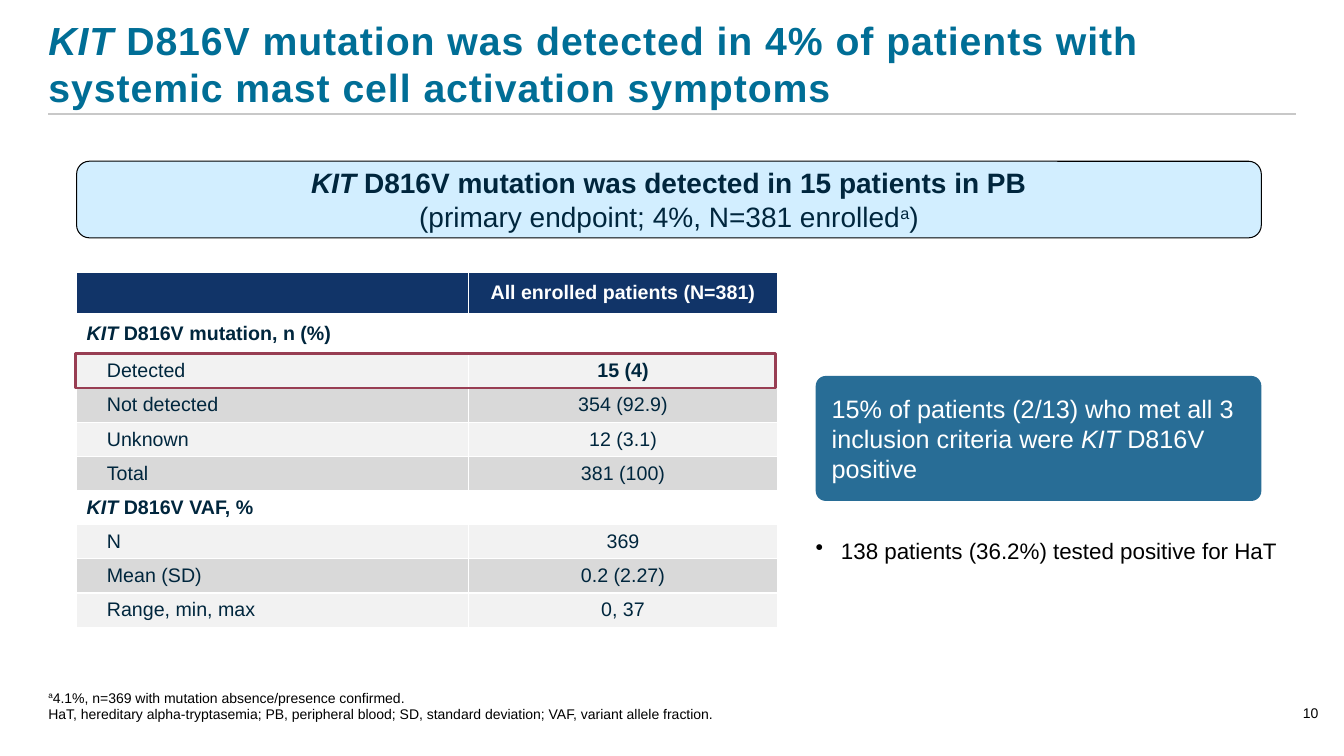
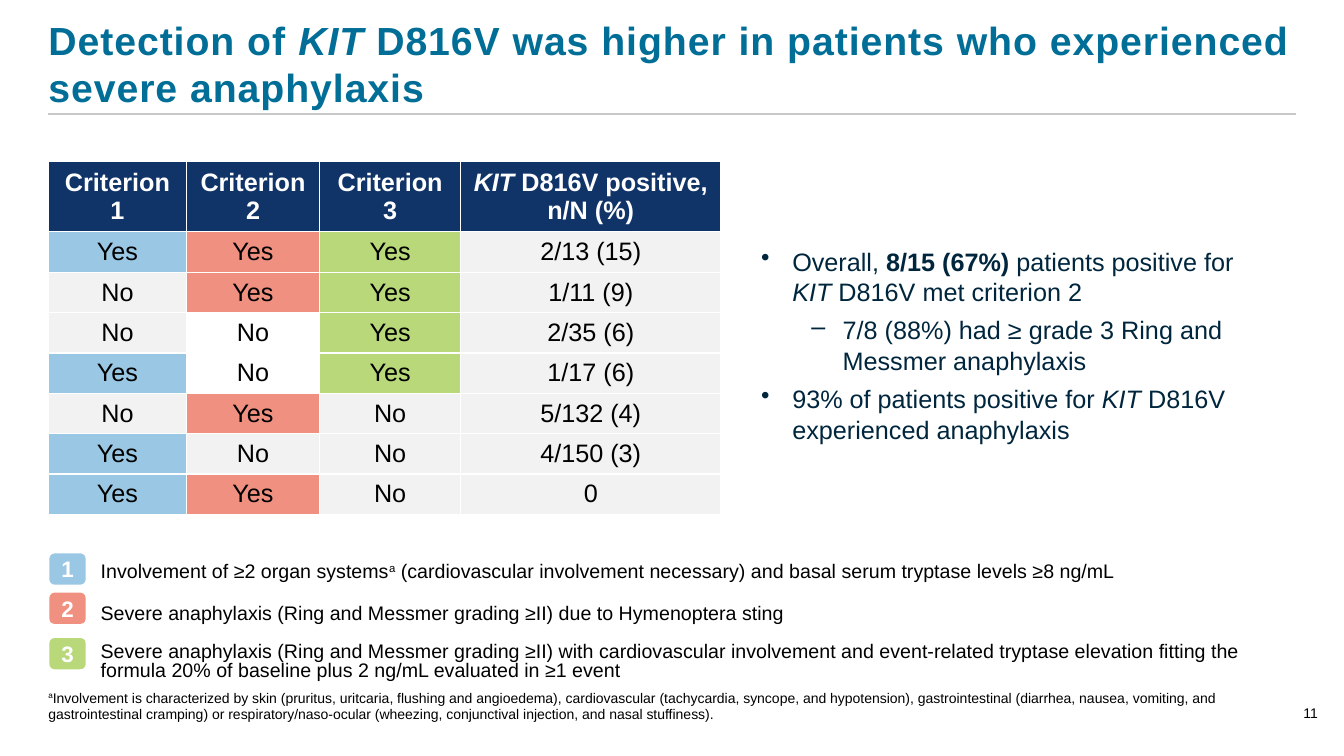
from dataclasses import dataclass

from lxml import etree
from pptx import Presentation
from pptx.dml.color import RGBColor
from pptx.enum.shapes import MSO_CONNECTOR, MSO_SHAPE
from pptx.enum.text import MSO_ANCHOR, MSO_AUTO_SIZE, PP_ALIGN
from pptx.oxml.ns import qn
from pptx.util import Inches, Pt

LEFT, CENTER = PP_ALIGN.LEFT, PP_ALIGN.CENTER
TOP, MIDDLE, BOTTOM = MSO_ANCHOR.TOP, MSO_ANCHOR.MIDDLE, MSO_ANCHOR.BOTTOM
FIXED = MSO_AUTO_SIZE.NONE
RECT, ROUND = MSO_SHAPE.RECTANGLE, MSO_SHAPE.ROUNDED_RECTANGLE
STRAIGHT = MSO_CONNECTOR.STRAIGHT
SIDES = ("a:lnL", "a:lnR", "a:lnT", "a:lnB")


@dataclass(frozen=True)
class Theme:
    """Colours, font and type sizes of the deck."""

    font: str = "Arial"
    title: str = "006E96"
    rule: str = "C8C8C8"
    ink: str = "00263D"
    black: str = "000000"
    white: str = "FFFFFF"
    navy: str = "113468"
    pale: str = "D2EEFF"
    teal: str = "286D96"
    mark: str = "983E53"
    light: str = "F2F2F2"
    dark: str = "D9D9D9"
    keys: tuple = ("9AC8E4", "F09080", "B8D879")
    head: int = 28
    lead: int = 20
    body: int = 18
    mid: int = 16
    small: int = 14
    note: int = 10


T = Theme()
KIT = ("KIT", "i")
SECTIONS = (1, 6)
BLANKS = ((3, 1), (4, 1))


def rgb(code):
    """Turn a hex code into a colour."""
    return RGBColor.from_string(code)


def apply(item, **values):
    """Set each named value on an object."""
    for name, value in values.items():
        setattr(item, name, value)


def box(values):
    """Turn numbers into inch lengths."""
    return [Inches(value) for value in values]


def pad(item, sides):
    """Set left, top, right and bottom margins."""
    names = ("margin_left", "margin_top", "margin_right", "margin_bottom")
    apply(item, **dict(zip(names, box(sides))))


def write(frame, paras, size, color, bold=False, **form):
    """Fill a text frame with paragraphs of plain or flagged runs."""
    for num, runs in enumerate(paras):
        para = frame.add_paragraph() if num else frame.paragraphs[0]
        apply(para, **form)
        for part in runs:
            text, flags = (part, "") if isinstance(part, str) else part
            run = para.add_run()
            run.text = text
            apply(run.font, name=T.font, size=Pt(size),
                  bold=bold or "b" in flags, italic="i" in flags)
            run.font.color.rgb = rgb(color)
            if "s" in flags:
                run.font._element.set("baseline", "30000")


def bullet(para, sign, left, hang):
    """Give a paragraph a bullet with a hanging indent."""
    props = para._p.get_or_add_pPr()
    props.set("marL", str(Inches(left)))
    props.set("indent", str(-Inches(hang)))
    etree.SubElement(props, qn("a:buChar")).set("char", sign)


def label(slide, at, paras, size, color, inset=(0, 0, 0, 0), anchor=TOP, **form):
    """Add a wrapped text box and return its frame."""
    frame = slide.shapes.add_textbox(*box(at)).text_frame
    apply(frame, word_wrap=True, vertical_anchor=anchor)
    pad(frame, inset)
    write(frame, paras, size, color, **form)
    return frame


def panel(slide, kind, at, fill=None, line=None, width=1):
    """Add a flat shape and return it."""
    shape = slide.shapes.add_shape(kind, *box(at))
    shape.shadow.inherit = False
    if fill:
        shape.fill.solid()
        shape.fill.fore_color.rgb = rgb(fill)
    else:
        shape.fill.background()
    if line:
        shape.line.color.rgb = rgb(line)
        shape.line.width = Pt(width)
    else:
        shape.line.fill.background()
    apply(shape.text_frame, word_wrap=True, vertical_anchor=MIDDLE)
    return shape


def paint(cell, fill):
    """Give a cell white borders and a solid fill."""
    props = cell._tc.get_or_add_tcPr()
    for side in SIDES:
        edge = etree.SubElement(props, qn(side), w=str(Pt(1)))
        solid = etree.SubElement(edge, qn("a:solidFill"))
        etree.SubElement(solid, qn("a:srgbClr"), val=T.white)
    cell.fill.solid()
    cell.fill.fore_color.rgb = rgb(fill)


def grid(slide, spot, cols, highs, rows, size, color, look):
    """Add a table whose body cells are styled by look(row, col)."""
    at = box((*spot, sum(cols), sum(highs)))
    table = slide.shapes.add_table(len(rows), len(cols), *at).table
    for col, width in zip(table.columns, cols):
        col.width = Inches(width)
    for row, high in zip(table.rows, highs):
        row.height = Inches(high)
    for r, row in enumerate(rows):
        for c, runs in enumerate(row):
            style = {"fill": T.navy, "color": T.white, "bold": True}
            if r:
                style = {"color": color, **look(r, c)}
            cell = table.cell(r, c)
            paint(cell, style.pop("fill"))
            cell.vertical_anchor = MIDDLE
            pad(cell, (style.pop("inset", 0.1), 0.05, 0.1, 0.05))
            style.setdefault("alignment", CENTER)
            if runs:
                write(cell.text_frame, [runs], size, **style)
    return table


def start(deck, title, number, notes, wide):
    """Add a slide with title, rule, footnote and page number."""
    slide = deck.slides.add_slide(deck.slide_layouts[5])
    head = slide.shapes.title
    names = ("left", "top", "width", "height")
    apply(head, **dict(zip(names, box((0.48, 0.33, 12.36, 0.82)))))
    frame = head.text_frame
    apply(frame, word_wrap=True, vertical_anchor=BOTTOM, auto_size=FIXED)
    pad(frame, (0, 0.05, 0, 0.05))
    write(frame, [title], T.head, T.title, bold=True, alignment=LEFT)
    for run in frame.paragraphs[0].runs:
        run.font._element.set("spc", "70")
    rule = slide.shapes.add_connector(STRAIGHT, *box((0.48, 1.13, 12.85, 1.13)))
    rule.line.color.rgb = rgb(T.rule)
    rule.line.width = Pt(1)
    etree.SubElement(rule.element.spPr, qn("a:effectLst"))
    label(slide, (0.48, 6.62, wide, 0.55), notes, T.note, T.black, anchor=BOTTOM)
    label(slide, (12.75, 6.76, 0.5, 0.4), [[number]], T.note, T.black,
          anchor=BOTTOM, alignment=CENTER)
    return slide


def shade(r, c):
    """Style a body cell of the mutation table."""
    if r in SECTIONS:
        return {"fill": T.white, "bold": True, "alignment": LEFT}
    step = r - max(s for s in SECTIONS if s < r)
    style = {"fill": T.light if step % 2 else T.dark}
    if c == 0:
        style.update(inset=0.3, alignment=LEFT)
    return style


def rates(deck):
    """Build the slide on the mutation rate."""
    slide = start(
        deck,
        [KIT, " D816V mutation was detected in 4% of patients with "
         "systemic mast cell activation symptoms"],
        "10",
        [[("a", "s"), "4.1%, n=369 with mutation absence/presence confirmed."],
         ["HaT, hereditary alpha-tryptasemia; PB, peripheral blood; SD, "
          "standard deviation; VAF, variant allele fraction."]],
        6.67)
    rows = [
        ([], ["All enrolled patients (N=381)"]),
        ([KIT, " D816V mutation, n (%)"], []),
        (["Detected"], [("15 (4)", "b")]),
        (["Not detected"], ["354 (92.9)"]),
        (["Unknown"], ["12 (3.1)"]),
        (["Total"], ["381 (100)"]),
        ([KIT, " D816V VAF, %"], []),
        (["N"], ["369"]),
        (["Mean (SD)"], ["0.2 (2.27)"]),
        (["Range, min, max"], ["0, 37"]),
    ]
    highs = [0.41, 0.4] + [0.34] * 4 + [0.32] + [0.34] * 3
    table = grid(slide, (0.76, 2.7), (3.89, 3.06), highs, rows,
                 T.small, T.ink, shade)
    for r in SECTIONS:
        table.cell(r, 0).merge(table.cell(r, 1))
    banner = panel(slide, ROUND, (0.76, 1.6, 11.75, 0.76), T.pale, T.black, 0.75)
    write(banner.text_frame,
          [[("KIT", "bi"),
            (" D816V mutation was detected in 15 patients in PB", "b")],
           ["(primary endpoint; 4%, N=381 enrolled", ("a", "s"), ")"]],
          T.lead, T.ink, alignment=CENTER)
    panel(slide, RECT, (0.75, 3.51, 6.94, 0.34), line=T.mark, width=2)
    call = panel(slide, ROUND, (8.09, 3.73, 4.42, 1.24), T.teal)
    call.adjustments[0] = 0.08
    pad(call.text_frame, (0.13, 0.07, 0.13, 0.07))
    write(call.text_frame,
          [["15% of patients (2/13) who met all 3 inclusion criteria were ",
            KIT, " D816V positive"]],
          T.body, T.white, alignment=LEFT)
    frame = label(slide, (8.09, 5.28, 4.75, 0.37),
                  [["138 patients (36.2%) tested positive for HaT"]],
                  T.mid, T.black, inset=(0, 0.05, 0.1, 0.05))
    bullet(frame.paragraphs[0], "•", 0.25, 0.25)


def criteria(deck):
    """Build the slide on the three criteria."""
    slide = start(
        deck,
        ["Detection of ", KIT,
         " D816V was higher in patients who experienced severe anaphylaxis"],
        "11",
        [[("a", "s"),
          "Involvement is characterized by skin (pruritus, uritcaria, flushing "
          "and angioedema), cardiovascular (tachycardia, syncope, and "
          "hypotension), gastrointestinal (diarrhea, nausea, vomiting, and "
          "gastrointestinal cramping) or respiratory/naso-ocular (wheezing, "
          "conjunctival injection, and nasal stuffiness)."]],
        12.26)
    data = [
        ("Yes", "Yes", "Yes", "2/13 (15)"),
        ("No", "Yes", "Yes", "1/11 (9)"),
        ("No", "No", "Yes", "2/35 (6)"),
        ("Yes", "No", "Yes", "1/17 (6)"),
        ("No", "Yes", "No", "5/132 (4)"),
        ("Yes", "No", "No", "4/150 (3)"),
        ("Yes", "Yes", "No", "0"),
    ]

    def tint(r, c):
        """Style a body cell by its answer."""
        if data[r - 1][c] == "Yes":
            return {"fill": T.keys[c]}
        return {"fill": T.white if (r, c) in BLANKS else T.light}

    top = [[f"Criterion {n}"] for n in (1, 2, 3)]
    top.append([KIT, " D816V positive, n/N (%)"])
    rows = [top] + [[[text] for text in row] for row in data]
    grid(slide, (0.48, 1.6), (1.37, 1.32, 1.4, 2.58), [0.66] + [0.38] * 7,
         rows, T.body, T.black, tint)
    frame = label(
        slide, (7.2, 2.39, 5.44, 2.09),
        [["Overall, ", ("8/15 (67%)", "b"), " patients positive for ", KIT,
          " D816V met criterion 2"],
         ["7/8 (88%) had ≥ grade 3 Ring and Messmer anaphylaxis"],
         ["93% of patients positive for ", KIT,
          " D816V experienced anaphylaxis"]],
        T.body, T.ink, inset=(0.1, 0.05, 0.1, 0.05), space_after=Pt(6))
    for para, sign, left in zip(frame.paragraphs, "•–•", (0.56, 1.06, 0.56)):
        bullet(para, sign, left, 0.31)
    legend = [
        (5.49, 5.68, ["Involvement of ≥2 organ systems", ("a", "s"),
                      " (cardiovascular involvement necessary) and basal serum "
                      "tryptase levels ≥8 ng/mL"]),
        (5.88, 6.1, ["Severe anaphylaxis (Ring and Messmer grading ≥II) due to "
                     "Hymenoptera sting"]),
        (6.33, 6.57, ["Severe anaphylaxis (Ring and Messmer grading ≥II) with "
                      "cardiovascular involvement and event-related tryptase "
                      "elevation fitting the formula 20% of baseline plus "
                      "2 ng/mL evaluated in ≥1 event"]),
    ]
    for num, (y, mid, runs) in enumerate(legend):
        badge = panel(slide, ROUND, (0.49, y, 0.36, 0.31), T.keys[num])
        pad(badge.text_frame, (0, 0, 0, 0))
        write(badge.text_frame, [[str(num + 1)]], T.mid, T.white,
              bold=True, alignment=CENTER)
        label(slide, (0.9, mid - 0.2, 11.78, 0.4), [runs], T.small, T.black,
              inset=(0.1, 0, 0.1, 0), anchor=MIDDLE, line_spacing=0.8)


def main():
    """Build and save the deck."""
    deck = Presentation()
    apply(deck, slide_width=Inches(13.33), slide_height=Inches(7.5))
    rates(deck)
    criteria(deck)
    deck.save("out.pptx")


if __name__ == "__main__":
    main()
